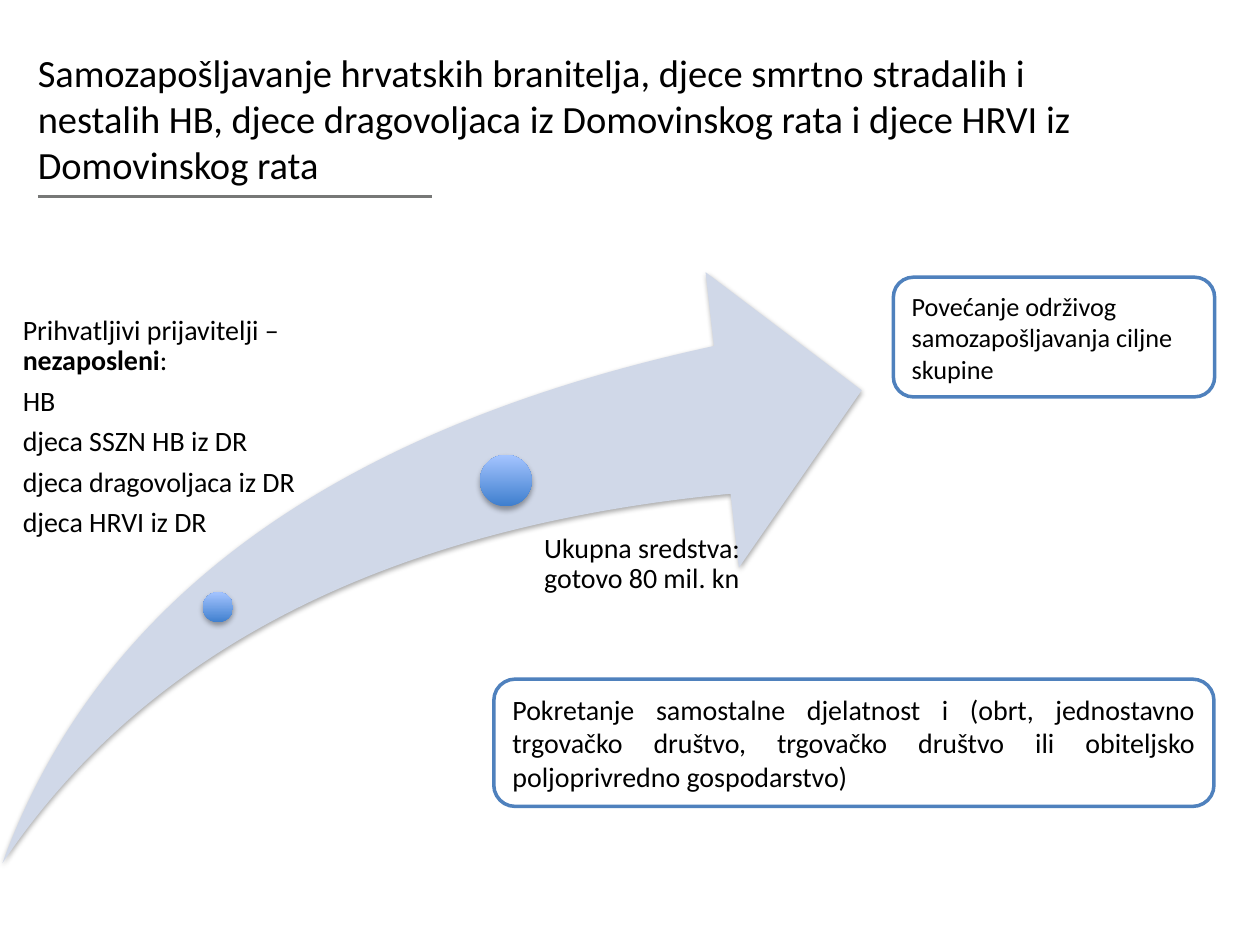
from lxml.etree import SubElement
from pptx import Presentation
from pptx.dml.color import RGBColor
from pptx.enum.shapes import MSO_CONNECTOR, MSO_SHAPE
from pptx.enum.text import MSO_ANCHOR, MSO_AUTO_SIZE, PP_ALIGN
from pptx.oxml.ns import qn
from pptx.util import Pt

BLACK = RGBColor(0x00, 0x00, 0x00)
WHITE = RGBColor(0xFF, 0xFF, 0xFF)
SWOOSH = RGBColor(0xD0, 0xD8, 0xE8)
DOT_DARK = RGBColor(0x3F, 0x7F, 0xCE)
DOT_LIGHT = RGBColor(0xA4, 0xC4, 0xFF)
BORDER = RGBColor(0x4F, 0x81, 0xBD)
RULE = RGBColor(0x77, 0x78, 0x77)


def write_text(paragraph, text, font="Calibri", size=16, bold=False, color=BLACK,
               align=PP_ALIGN.LEFT, line_spacing=1.0, after=0):
    paragraph.alignment = align
    paragraph.line_spacing = line_spacing
    paragraph.space_before = Pt(0)
    paragraph.space_after = Pt(after)
    run = paragraph.add_run()
    run.text = text
    run.font.name = font
    run.font.size = Pt(size)
    run.font.bold = bold
    run.font.color.rgb = color


class SlideBuilder:
    label_style = {"line_spacing": 0.9, "after": 5.9}

    def __init__(self, slide):
        self.slide = slide

    def place(self, shape, left, top, width, height):
        shape.left, shape.top = Pt(left), Pt(top)
        shape.width, shape.height = Pt(width), Pt(height)

    def frame(self, shape, inset, anchor=MSO_ANCHOR.TOP):
        frame = shape.text_frame
        frame.word_wrap = True
        frame.auto_size = MSO_AUTO_SIZE.NONE
        frame.vertical_anchor = anchor
        frame.margin_left = Pt(inset)
        frame.margin_top = frame.margin_right = frame.margin_bottom = Pt(0)
        return frame

    def title(self, text, *box):
        shape = self.slide.shapes.title
        self.place(shape, *box)
        frame = self.frame(shape, 7.2, MSO_ANCHOR.MIDDLE)
        frame.margin_right = Pt(7.2)
        write_text(frame.paragraphs[0], text, size=22)

    def applicants(self, items, *box):
        shape = self.slide.placeholders[1]
        self.place(shape, *box)
        frame = self.frame(shape, 9.4)
        for index, runs in enumerate(items):
            paragraph = frame.add_paragraph() if index else frame.paragraphs[0]
            properties = paragraph._p.get_or_add_pPr()
            properties.set("marL", "0")
            properties.set("indent", "0")
            SubElement(properties, qn("a:buNone"))
            for text, bold in runs:
                write_text(paragraph, text, bold=bold, **self.label_style)

    def label(self, text, *box):
        shape = self.slide.shapes.add_textbox(*map(Pt, box))
        frame = self.frame(shape, 15.8)
        write_text(frame.paragraphs[0], text, **self.label_style)

    def shape(self, kind, *box):
        shape = self.slide.shapes.add_shape(kind, *map(Pt, box))
        shape.shadow.inherit = False
        shape.line.fill.background()
        return shape

    def cast_shadow(self, shape):
        effects = shape._element.spPr.find(qn("a:effectLst"))
        shadow = SubElement(effects, qn("a:outerShdw"), blurRad=str(Pt(3.1)),
                            dist=str(Pt(1.8)), dir="5400000", rotWithShape="0")
        color = SubElement(shadow, qn("a:srgbClr"), val=str(BLACK))
        SubElement(color, qn("a:alpha"), val="35000")

    def swoosh(self, *box):
        shape = self.shape(MSO_SHAPE.SWOOSH_ARROW, *box)
        shape.adjustments[0] = shape.adjustments[1] = 0.25
        shape.fill.solid()
        shape.fill.fore_color.rgb = SWOOSH
        self.cast_shadow(shape)

    def dot(self, left, top, size):
        shape = self.shape(MSO_SHAPE.OVAL, left, top, size, size)
        shape.fill.gradient()
        shape.fill.gradient_angle = 90
        for stop, color in zip(shape.fill.gradient_stops, (DOT_DARK, DOT_LIGHT)):
            stop.color.rgb = color
        self.cast_shadow(shape)

    def card(self, text, *box, **text_format):
        shape = self.shape(MSO_SHAPE.ROUNDED_RECTANGLE, *box)
        shape.fill.solid()
        shape.fill.fore_color.rgb = WHITE
        shape.line.color.rgb = BORDER
        shape.line.width = Pt(2)
        shape.text_frame.word_wrap = True
        shape.text_frame.vertical_anchor = MSO_ANCHOR.MIDDLE
        write_text(shape.text_frame.paragraphs[0], text, **text_format)

    def rule(self, left, right, top):
        line = self.slide.shapes.add_connector(
            MSO_CONNECTOR.STRAIGHT, Pt(left), Pt(top), Pt(right), Pt(top))
        line.line.color.rgb = RULE
        line.line.width = Pt(2)
        SubElement(line._element.spPr, qn("a:effectLst"))


def main():
    presentation = Presentation()
    presentation.slide_width, presentation.slide_height = Pt(720), Pt(540)
    slide = presentation.slides.add_slide(presentation.slide_layouts[1])
    builder = SlideBuilder(slide)

    builder.title(
        "Samozapošljavanje hrvatskih branitelja, djece smrtno stradalih i nestalih HB, "
        "djece dragovoljaca iz Domovinskog rata i djece HRVI iz Domovinskog rata",
        14.4, 22.4, 605.5, 90)
    builder.rule(21.6, 247, 112.4)
    builder.swoosh(1.4, 155.5, 491, 337.7)
    builder.dot(115.9, 338.4, 17.3)
    builder.dot(274.3, 259.9, 29.5)
    builder.applicants([
        [("Prihvatljivi prijavitelji – ", False), ("nezaposleni", True), (":", False)],
        [("HB", False)],
        [("djeca SSZN HB iz DR", False)],
        [("djeca dragovoljaca iz DR", False)],
        [("djeca HRVI iz DR", False)],
    ], 3.6, 180.7, 195.8, 131)
    builder.label("Ukupna sredstva: gotovo 80 mil. kn", 295.2, 305.3, 159.8, 56.2)
    builder.card("Povećanje održivog samozapošljavanja ciljne skupine",
                 510.5, 158.4, 183.6, 68.4, size=15)
    builder.card(
        "Pokretanje samostalne djelatnost i (obrt, jednostavno trgovačko društvo, "
        "trgovačko društvo ili obiteljsko poljoprivredno gospodarstvo)",
        282.2, 388.1, 411.5, 72.7, align=PP_ALIGN.JUSTIFY)

    presentation.save("out.pptx")


if __name__ == "__main__":
    main()
